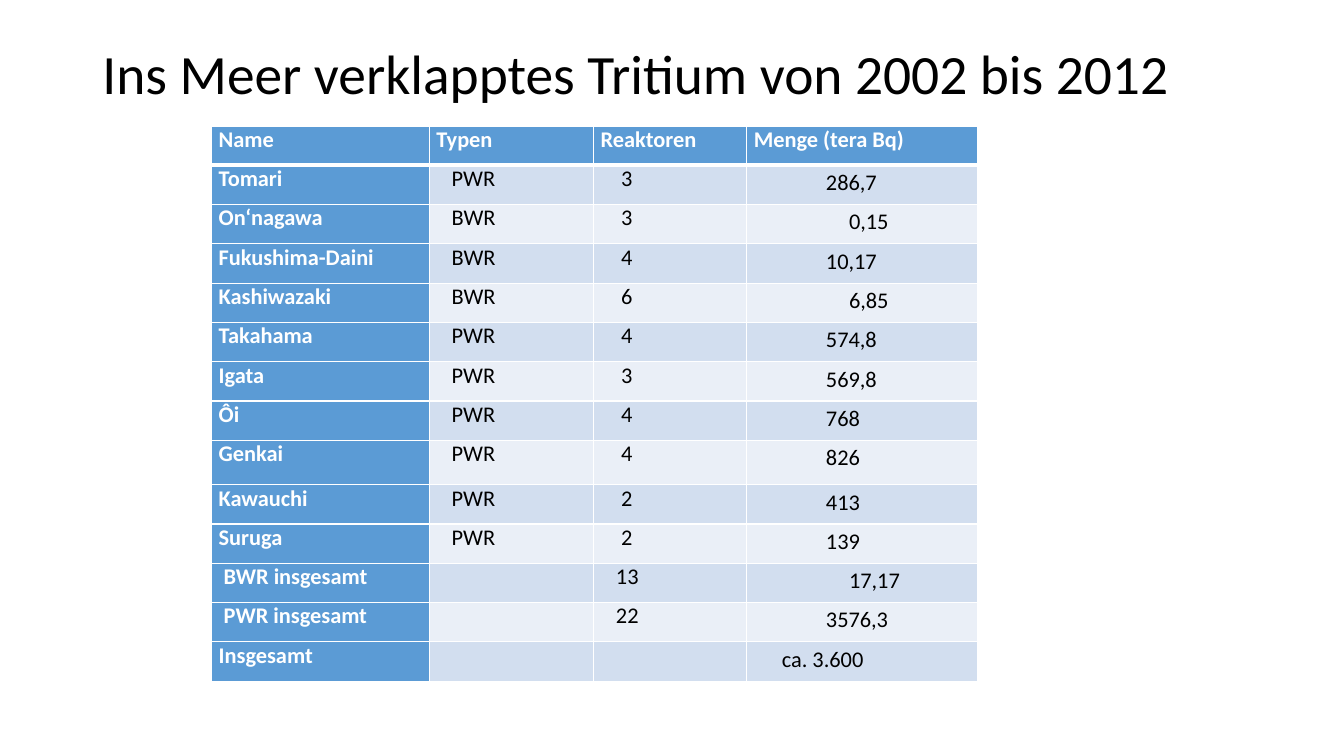
import pptx
import pptx.dml.color
import pptx.enum.text
import pptx.oxml
import pptx.oxml.ns
import pptx.util

Pt = pptx.util.Pt

COLORS = {
    "text": "000000",
    "white": "FFFFFF",
    "header": "5B9BD5",
    "odd_row": "D2DEEF",
    "even_row": "EAEFF7",
}

HEADINGS = ("Name", "Typen", "Reaktoren", "Menge (tera Bq)")
PLANTS = [
    ("Tomari", "PWR", "3", "286,7"),
    ("On‘nagawa", "BWR", "3", "0,15"),
    ("Fukushima-Daini", "BWR", "4", "10,17"),
    ("Kashiwazaki", "BWR", "6", "6,85"),
    ("Takahama", "PWR", "4", "574,8"),
    ("Igata", "PWR", "3", "569,8"),
    ("Ôi", "PWR", "4", "768"),
    ("Genkai", "PWR", "4", "826"),
    ("Kawauchi", "PWR", "2", "413"),
    ("Suruga", "PWR", "2", "139"),
    ("BWR insgesamt", "", "13", "17,17"),
    ("PWR insgesamt", "", "22", "3576,3"),
    ("Insgesamt", "", "", "ca. 3.600"),
]
COLUMN_WIDTHS = (155.5, 117.4, 109.4, 164.9)
ROW_HEIGHTS = [31.7 if plant == "Genkai" else 28.08
               for plant in ("Name", *(row[0] for row in PLANTS))]

# Text indents of the body cells, by column, and the cells that differ
COLUMN_INDENTS = (0, 10.9, 14.5, 51.5)
SPECIAL_INDENTS = {
    "BWR insgesamt": 3.6, "PWR insgesamt": 3.6,
    "13": 10.9, "22": 10.9,
    "0,15": 68, "6,85": 68, "17,17": 68,
    "ca. 3.600": 20,
}
CELL_INSET = 5.04
AMOUNT_DROP = 2.9


class SlideBuilder:
    font_name = "Calibri"

    def __init__(self, presentation):
        self.slide = presentation.slides.add_slide(presentation.slide_layouts[5])

    def format_text(self, paragraph, size, color, bold=False):
        for run in paragraph.runs:
            run.font.name = self.font_name
            run.font.size = Pt(size)
            run.font.bold = bold
            run.font.color.rgb = pptx.dml.color.RGBColor.from_string(COLORS[color])

    def title(self, text, left, top, width, height, size):
        shape = self.slide.shapes.title
        shape.left, shape.top = Pt(left), Pt(top)
        shape.width, shape.height = Pt(width), Pt(height)
        frame = shape.text_frame
        frame.text = text
        frame.word_wrap = True
        frame.auto_size = pptx.enum.text.MSO_AUTO_SIZE.NONE
        frame.vertical_anchor = pptx.enum.text.MSO_ANCHOR.MIDDLE
        paragraph = frame.paragraphs[0]
        paragraph.alignment = pptx.enum.text.PP_ALIGN.LEFT
        paragraph.line_spacing = 0.9
        self.format_text(paragraph, size, "text")

    def borders(self, cell, top=1, bottom=1):
        properties = cell._tc.get_or_add_tcPr()
        for side, width in (("L", 1), ("R", 1), ("T", top), ("B", bottom)):
            properties.append(pptx.oxml.parse_xml(
                f'<a:ln{side} {pptx.oxml.ns.nsdecls("a")} w="{Pt(width)}"><a:solidFill>'
                f'<a:srgbClr val="{COLORS["white"]}"/></a:solidFill></a:ln{side}>'))

    def cell(self, cell, text, fill, color, bold, indent=0, drop=0):
        cell.margin_left = Pt(CELL_INSET + indent)
        cell.margin_right = Pt(CELL_INSET)
        cell.margin_top, cell.margin_bottom = Pt(drop), 0
        cell.fill.solid()
        cell.fill.fore_color.rgb = pptx.dml.color.RGBColor.from_string(COLORS[fill])
        cell.text_frame.text = text
        self.format_text(cell.text_frame.paragraphs[0], 16, color, bold)

    def table(self, rows, left, top, widths, heights):
        table = self.slide.shapes.add_table(
            len(rows), len(widths), Pt(left), Pt(top),
            Pt(sum(widths)), Pt(sum(heights))).table
        table.first_col = True
        for column, width in zip(table.columns, widths):
            column.width = Pt(width)
        for row, height in zip(table.rows, heights):
            row.height = Pt(height)

        for row_index, row in enumerate(rows):
            for column_index, text in enumerate(row):
                cell = table.cell(row_index, column_index)
                # The thick rule lies between the header and the first plant
                self.borders(cell, top=3 if row_index == 1 else 1,
                             bottom=3 if row_index == 0 else 1)
                if row_index == 0:
                    self.cell(cell, text, "header", "white", True)
                    continue
                indent = SPECIAL_INDENTS.get(text, COLUMN_INDENTS[column_index])
                if column_index == 0:
                    self.cell(cell, text, "header", "white", True, indent)
                else:
                    band = "odd_row" if row_index % 2 else "even_row"
                    drop = AMOUNT_DROP if column_index == 3 else 0
                    self.cell(cell, text, band, "text", False, indent, drop)


def main():
    presentation = pptx.Presentation()
    presentation.slide_width, presentation.slide_height = Pt(960), Pt(540)
    builder = SlideBuilder(presentation)

    # Title
    builder.title("Ins Meer verklapptes Tritium von 2002 bis 2012",
                  66, 28.8, 828, 51.84, 39.6)

    # Table of plants and totals
    builder.table([HEADINGS, *PLANTS], 151.2, 90, COLUMN_WIDTHS, ROW_HEIGHTS)

    presentation.save("out.pptx")


if __name__ == "__main__":
    main()
